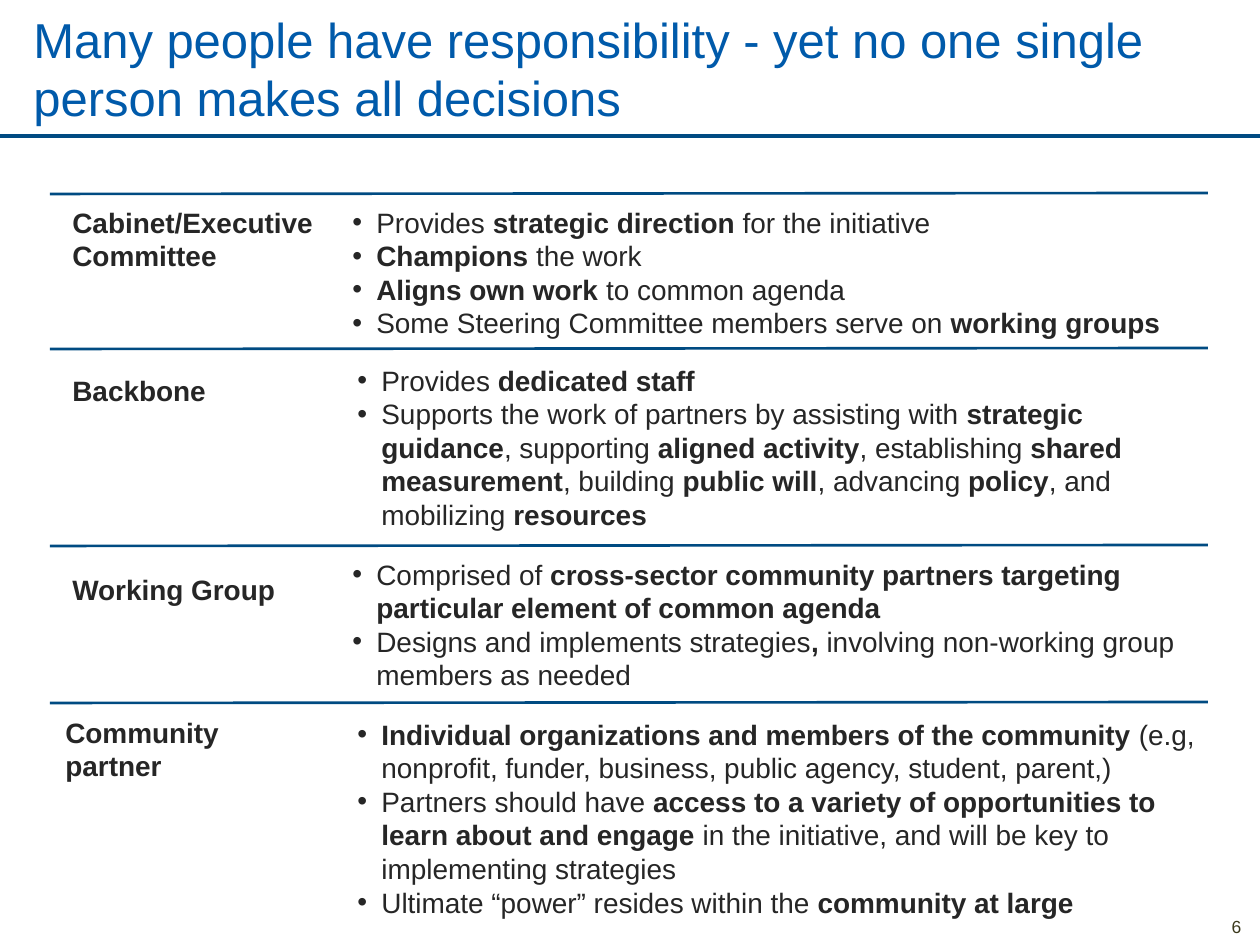
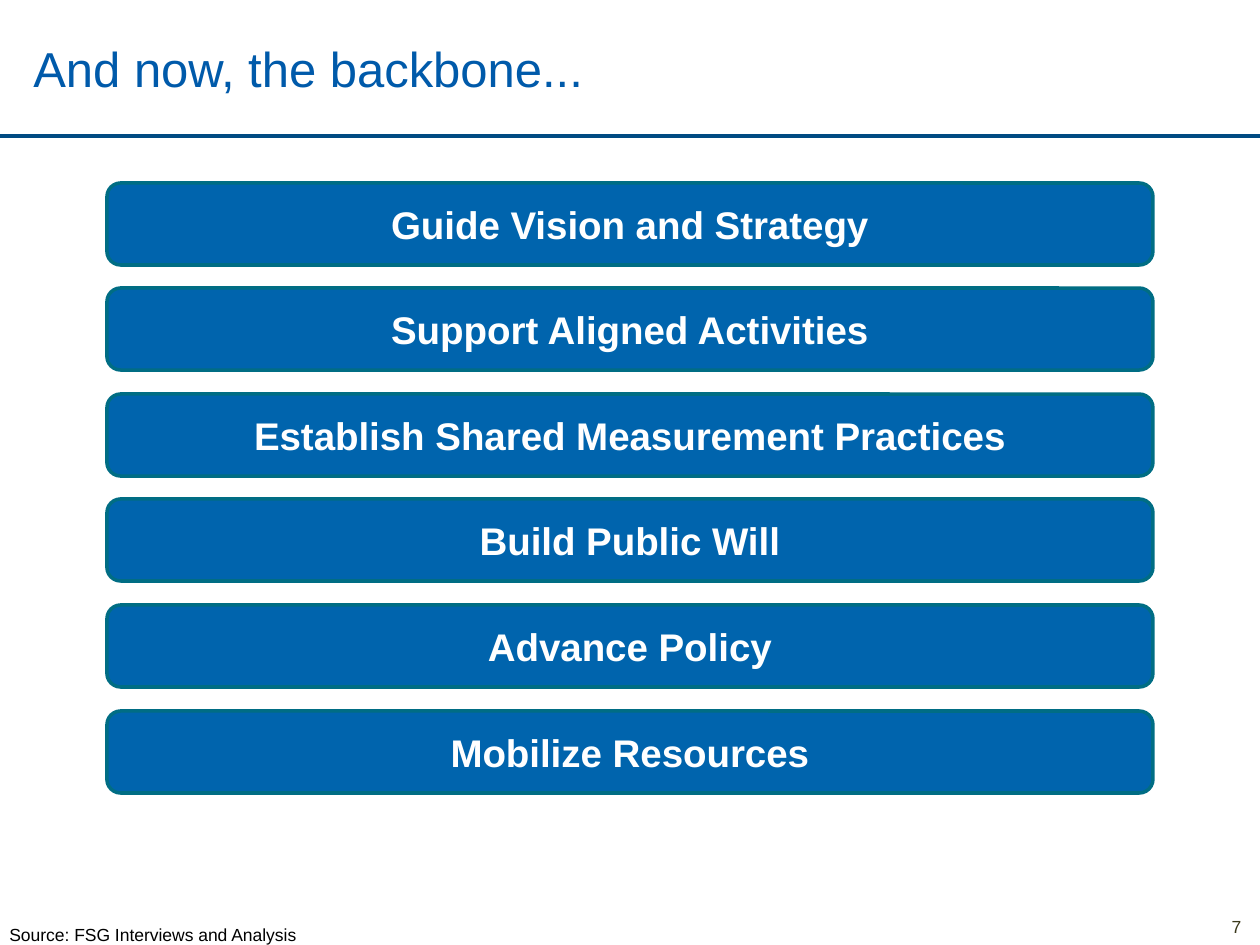
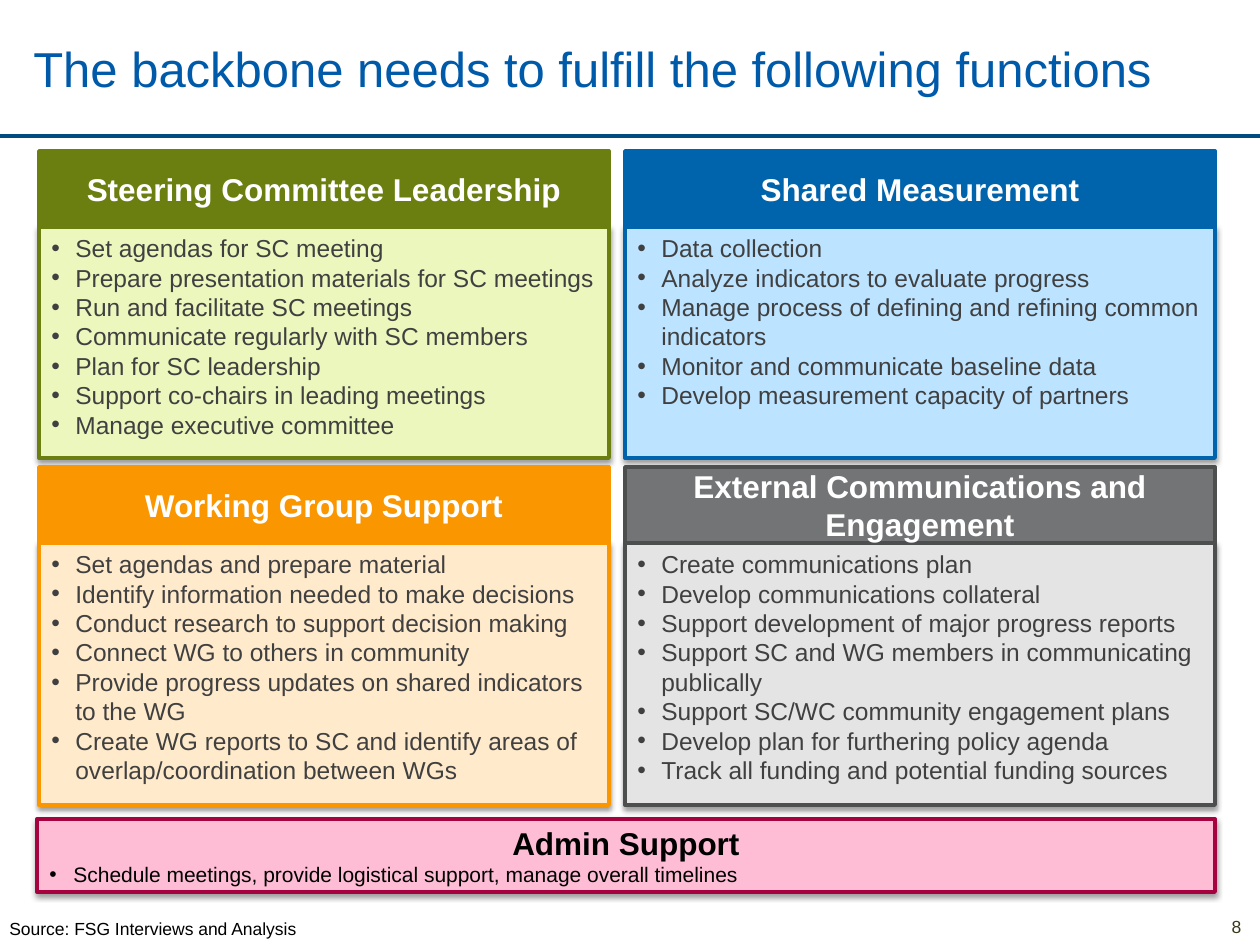
"""Build three slides on collective responsibility and the backbone role."""
from dataclasses import dataclass
from typing import NamedTuple

from lxml.etree import SubElement
from pptx import Presentation
from pptx.dml.color import RGBColor
from pptx.enum.shapes import MSO_CONNECTOR as Connector, MSO_SHAPE as Preset
from pptx.enum.text import MSO_ANCHOR as Anchor, PP_ALIGN as Align
from pptx.oxml.ns import qn
from pptx.shapes.autoshape import Shape
from pptx.slide import Slide
from pptx.text.text import TextFrame
from pptx.util import Emu, Pt

PX = 914400 / 126


@dataclass(frozen=True)
class Theme:
    """Colours and type sizes of the whole deck."""
    font: str = "Arial"
    title: str = "005AAA"
    rule: str = "004B82"
    number: str = "3B391C"
    ink: str = "262626"
    soft_ink: str = "404040"
    black: str = "000000"
    white: str = "FFFFFF"
    blue: str = "0064AD"
    blue_tint: str = "BCE3FF"
    teal: str = "006D84"
    green: str = "6A7F10"
    green_tint: str = "ECF7BE"
    orange: str = "FA9600"
    orange_tint: str = "FFEACB"
    grey: str = "737475"
    grey_edge: str = "4D4E4E"
    grey_tint: str = "E4E4E4"
    crimson: str = "A70240"
    pink: str = "FEBCD5"
    title_size: int = 28
    bar_size: int = 22
    heading_size: int = 18
    role_size: int = 16
    list_size: int = 14
    admin_size: int = 12
    note_size: int = 10


THEME = Theme()


class Box(NamedTuple):
    """Left, top, width and height in px."""
    left: int
    top: int
    width: int
    height: int


class Style(NamedTuple):
    """How a paragraph looks."""
    size: int
    color: str
    bold: bool = False
    align: Align = Align.LEFT
    bullet: bool = False


class Line(NamedTuple):
    """A paragraph whose bold parts stand between double asterisks."""
    text: str
    style: Style


class Role(NamedTuple):
    """A row of the responsibility overview."""
    rule_top: int
    label: str
    label_box: Box
    duties: list[str]
    duties_box: Box


class Card(NamedTuple):
    """A headed list of backbone functions."""
    heading: str
    fill: str
    edge: str
    tint: str
    items: list[str]


class CardColumn(NamedTuple):
    """Left edge and width of a column of cards."""
    left: int
    width: int


class CardRow(NamedTuple):
    """Top edge and list height of a row of cards."""
    top: int
    list_height: int


TITLE = Style(THEME.title_size, THEME.title)
NUMBER = Style(THEME.note_size, THEME.number, align=Align.CENTER)
SOURCE = Style(THEME.note_size, THEME.black)
ROLE_LABEL = Style(THEME.role_size, THEME.ink, bold=True)
ROLE_DUTY = Style(THEME.role_size, THEME.ink, bullet=True)
BAR = Style(THEME.bar_size, THEME.white, True, Align.CENTER)
CARD_HEADING = Style(THEME.heading_size, THEME.white, True, Align.CENTER)
CARD_ITEM = Style(THEME.list_size, THEME.soft_ink, bullet=True)
ADMIN_HEADING = Style(THEME.heading_size, THEME.black, True, Align.CENTER)
ADMIN_ITEM = Style(THEME.admin_size, THEME.black, bullet=True)

SLIDE_WIDTH, SLIDE_HEIGHT = 1260, 945
TITLE_HEIGHT = 136
BULLET_INDENT = 24
HEADING_HEIGHT = 76

ROLES = [
    Role(194, "Cabinet/Executive Committee", Box(60, 199, 275, 101), [
        "Provides **strategic direction **for the initiative",
        "**Champions **the work",
        "**Aligns own work **to common agenda",
        "Some Steering Committee members serve on **working groups**",
    ], Box(340, 199, 868, 149)),
    Role(349, "Backbone", Box(60, 367, 252, 47), [
        "Provides **dedicated staff**",
        "Supports the work of partners by assisting with **strategic guidance**, "
        "supporting **aligned activity**, establishing **shared measurement**, "
        "building **public will**, advancing **policy**, and mobilizing **resources**",
    ], Box(345, 357, 863, 183)),
    Role(546, "Working Group", Box(60, 566, 304, 47), [
        "Comprised of **cross-sector community partners targeting particular "
        "element of common agenda**",
        "Designs and implements strategies**, **involving non-working group "
        "members as needed",
    ], Box(340, 551, 868, 149)),
    Role(703, "Community partner", Box(53, 709, 252, 81), [
        "**Individual organizations and members of the community **(e.g, "
        "nonprofit, funder, business, public agency, student, parent,)",
        "Partners should have **access to a variety of opportunities to learn "
        "about and engage** in the initiative, and will be key to implementing "
        "strategies",
        "Ultimate “power” resides within the **community at large**",
    ], Box(345, 711, 863, 217)),
]

BACKBONE_TASKS = [
    "Guide Vision and Strategy",
    "Support Aligned Activities",
    "Establish Shared Measurement Practices",
    "Build Public Will",
    "Advance Policy",
    "Mobilize Resources",
]

CARD_COLUMNS = [CardColumn(39, 570), CardColumn(625, 590)]
CARD_ROWS = [CardRow(151, 231), CardRow(467, 262)]
CARDS = [
    Card("Steering Committee Leadership", THEME.green, THEME.green, THEME.green_tint, [
        "Set agendas for SC meeting",
        "Prepare presentation materials for SC meetings",
        "Run and facilitate SC meetings",
        "Communicate regularly with SC members",
        "Plan for SC leadership",
        "Support co-chairs in leading meetings",
        "Manage executive committee",
    ]),
    Card("Shared Measurement", THEME.blue, THEME.blue, THEME.blue_tint, [
        "Data collection",
        "Analyze indicators to evaluate progress",
        "Manage process of defining and refining common indicators",
        "Monitor and communicate baseline data",
        "Develop measurement capacity of partners",
    ]),
    Card("Working Group Support", THEME.orange, THEME.orange, THEME.orange_tint, [
        "Set agendas and prepare material",
        "Identify information needed to make decisions",
        "Conduct research to support decision making",
        "Connect WG to others in community",
        "Provide progress updates on shared indicators to the WG",
        "Create WG reports to SC and identify areas of overlap/coordination "
        "between WGs",
    ]),
    Card("External Communications and Engagement", THEME.grey, THEME.grey_edge,
         THEME.grey_tint, [
             "Create communications plan",
             "Develop communications collateral",
             "Support development of major progress reports",
             "Support SC and WG members in communicating publically",
             "Support SC/WC community engagement plans",
             "Develop plan for furthering policy agenda",
             "Track all funding and potential funding sources",
         ]),
]


def px(length: float) -> Emu:
    """Turn px into EMU."""
    return Emu(round(length * PX))


def place(box: Box) -> list[Emu]:
    """Turn a box into the four EMU lengths of a shape."""
    return [px(length) for length in box]


def styled(texts: list[str], style: Style) -> list[Line]:
    """Give every text the same style."""
    return [Line(text, style) for text in texts]


def write(frame: TextFrame, lines: list[Line], anchor: Anchor) -> None:
    """Fill a text frame with styled paragraphs."""
    frame.word_wrap = True
    frame.vertical_anchor = anchor
    for index, (text, style) in enumerate(lines):
        paragraph = frame.add_paragraph() if index else frame.paragraphs[0]
        paragraph.alignment = style.align
        if style.bullet:
            properties = paragraph._p.get_or_add_pPr()
            properties.set("marL", str(px(BULLET_INDENT)))
            properties.set("indent", str(-px(BULLET_INDENT)))
            SubElement(properties, qn("a:buFont"), typeface=THEME.font)
            SubElement(properties, qn("a:buChar"), char="•")
        font = paragraph.font
        font.name, font.size, font.bold = THEME.font, Pt(style.size), style.bold
        font.color.rgb = RGBColor.from_string(style.color)
        for position, part in enumerate(text.split("**")):
            if part:
                run = paragraph.add_run()
                run.text = part
                if position % 2:
                    run.font.bold = True


def add_text(slide: Slide, box: Box, lines: list[Line],
             anchor: Anchor = Anchor.TOP) -> TextFrame:
    """Add a text box and return its frame."""
    frame = slide.shapes.add_textbox(*place(box)).text_frame
    write(frame, lines, anchor)
    return frame


def add_panel(slide: Slide, box: Box, fill: str, edge: str, lines: list[Line],
              edge_width: float = 2, anchor: Anchor = Anchor.MIDDLE,
              preset: Preset = Preset.RECTANGLE) -> Shape:
    """Add a filled and outlined shape with text."""
    shape = slide.shapes.add_shape(preset, *place(box))
    shape.shadow.inherit = False
    shape.fill.solid()
    shape.fill.fore_color.rgb = RGBColor.from_string(fill)
    shape.line.color.rgb = RGBColor.from_string(edge)
    shape.line.width = Pt(edge_width)
    write(shape.text_frame, lines, anchor)
    return shape


def add_drop_shadow(shape: Shape) -> None:
    """Cast a soft shadow straight down."""
    effects = shape._element.spPr.find(qn("a:effectLst"))
    shadow = SubElement(effects, qn("a:outerShdw"), blurRad="40000", dist="20000",
                        dir="5400000", rotWithShape="0")
    color = SubElement(shadow, qn("a:srgbClr"), val=THEME.black)
    SubElement(color, qn("a:alpha"), val="38000")


def add_rule(slide: Slide, left: int, start: int, right: int, end: int,
             width: float) -> None:
    """Add a dividing line."""
    rule = slide.shapes.add_connector(Connector.STRAIGHT, px(left), px(start),
                                      px(right), px(end))
    rule.line.color.rgb = RGBColor.from_string(THEME.rule)
    rule.line.width = Pt(width)
    SubElement(rule._element.spPr, qn("a:effectLst"))


def add_slide(presentation: Presentation, title: str, title_width: int,
              number: int) -> Slide:
    """Add a blank slide with title, rule and slide number."""
    slide = presentation.slides.add_slide(presentation.slide_layouts[6])
    add_rule(slide, 0, TITLE_HEIGHT, SLIDE_WIDTH, TITLE_HEIGHT, 2.25)
    add_text(slide, Box(21, 0, title_width, TITLE_HEIGHT), [Line(title, TITLE)],
             Anchor.MIDDLE)
    frame = add_text(slide, Box(1213, 914, 47, 26), [Line(str(number), NUMBER)],
                     Anchor.MIDDLE)
    frame.word_wrap = False
    frame.margin_top = frame.margin_bottom = px(3)
    return slide


def add_source(slide: Slide, top: int) -> None:
    """Add the source line at the foot."""
    add_text(slide, Box(-3, top, 920, 34),
             [Line("Source: FSG Interviews and Analysis", SOURCE)], Anchor.MIDDLE)


def build_roles(presentation: Presentation) -> None:
    """Build the overview of who is responsible for what."""
    slide = add_slide(presentation, "Many people have responsibility - yet no one "
                      "single person makes all decisions", 1148, 6)
    for role in ROLES:
        add_rule(slide, 50, role.rule_top, 1208, role.rule_top - 1, 1.5)
        add_text(slide, role.label_box, [Line(role.label, ROLE_LABEL)])
        add_text(slide, role.duties_box, styled(role.duties, ROLE_DUTY))


def build_backbone(presentation: Presentation) -> None:
    """Build the stack of backbone tasks."""
    slide = add_slide(presentation, "And now, the backbone...", 1131, 7)
    first_top, last_top = 183, 711
    for index, task in enumerate(BACKBONE_TASKS):
        top = first_top + (last_top - first_top) * index // (len(BACKBONE_TASKS) - 1)
        bar = add_panel(slide, Box(107, top, 1046, 82), THEME.blue, THEME.teal,
                        [Line(task, BAR)], preset=Preset.ROUNDED_RECTANGLE)
        frame = bar.text_frame
        frame.margin_left = frame.margin_right = 0
        frame.margin_top = frame.margin_bottom = 0
    add_source(slide, 917)


def build_functions(presentation: Presentation) -> None:
    """Build the grid of backbone functions."""
    slide = add_slide(presentation, "The backbone needs to fulfill the following "
                      "functions", 1218, 8)
    add_source(slide, 911)
    admin = add_panel(slide, Box(37, 819, 1178, 73), THEME.pink, THEME.crimson, [
        Line("Admin Support", ADMIN_HEADING),
        Line("Schedule meetings, provide logistical support, manage overall "
             "timelines", ADMIN_ITEM),
    ], 2.25)
    add_drop_shadow(admin)
    for index, card in enumerate(CARDS):
        row, column = CARD_ROWS[index // 2], CARD_COLUMNS[index % 2]
        body_box = Box(column.left, row.top + HEADING_HEIGHT, column.width,
                       row.list_height)
        body = add_panel(slide, body_box, card.tint, card.edge,
                         styled(card.items, CARD_ITEM), 2.25, Anchor.TOP)
        add_drop_shadow(body)
        heading_box = Box(column.left, row.top, column.width, HEADING_HEIGHT)
        add_panel(slide, heading_box, card.fill, card.edge,
                  [Line(card.heading, CARD_HEADING)])


def main() -> None:
    """Build and save the deck."""
    presentation = Presentation()
    presentation.slide_width = px(SLIDE_WIDTH)
    presentation.slide_height = px(SLIDE_HEIGHT)
    build_roles(presentation)
    build_backbone(presentation)
    build_functions(presentation)
    presentation.save("out.pptx")


if __name__ == "__main__":
    main()
